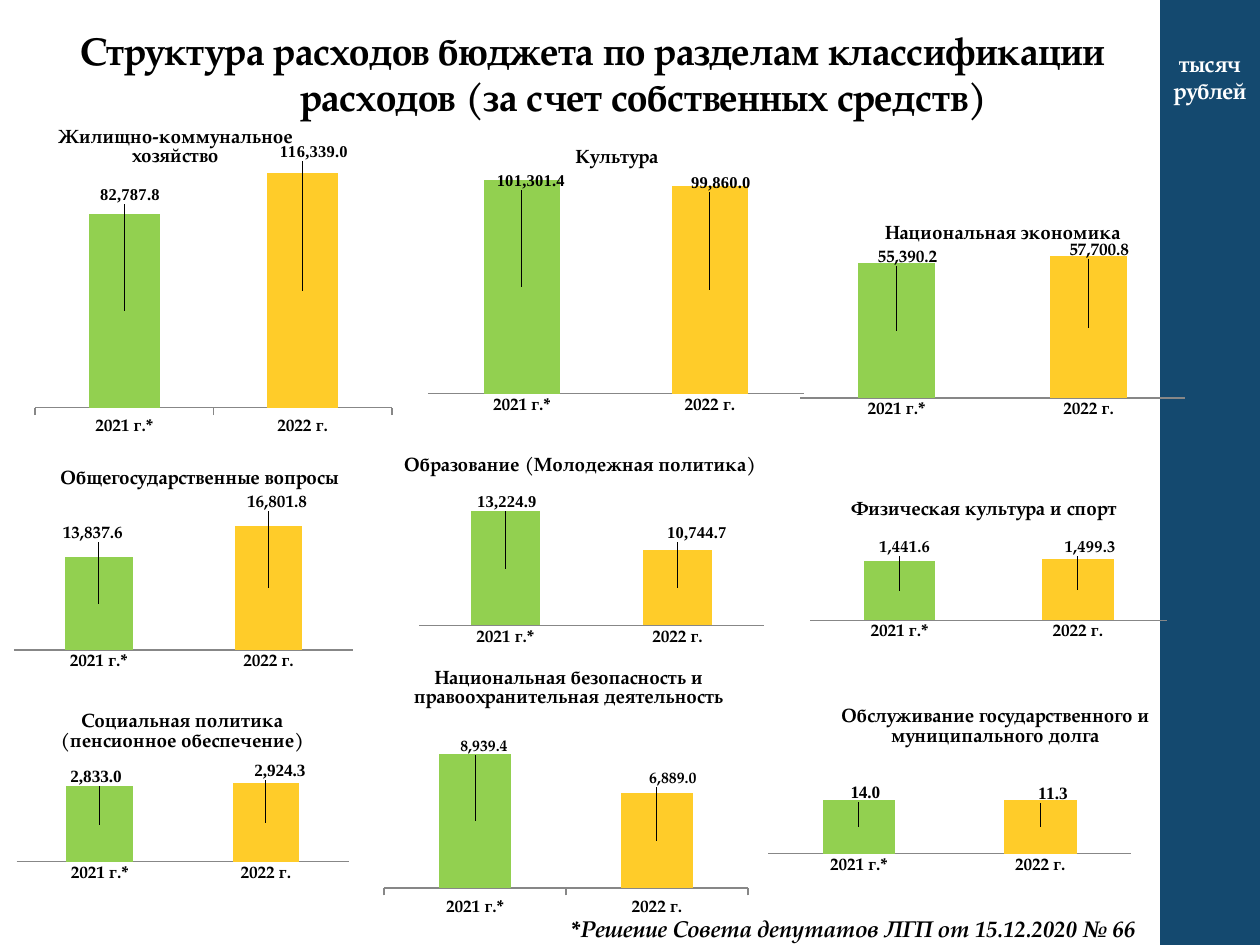
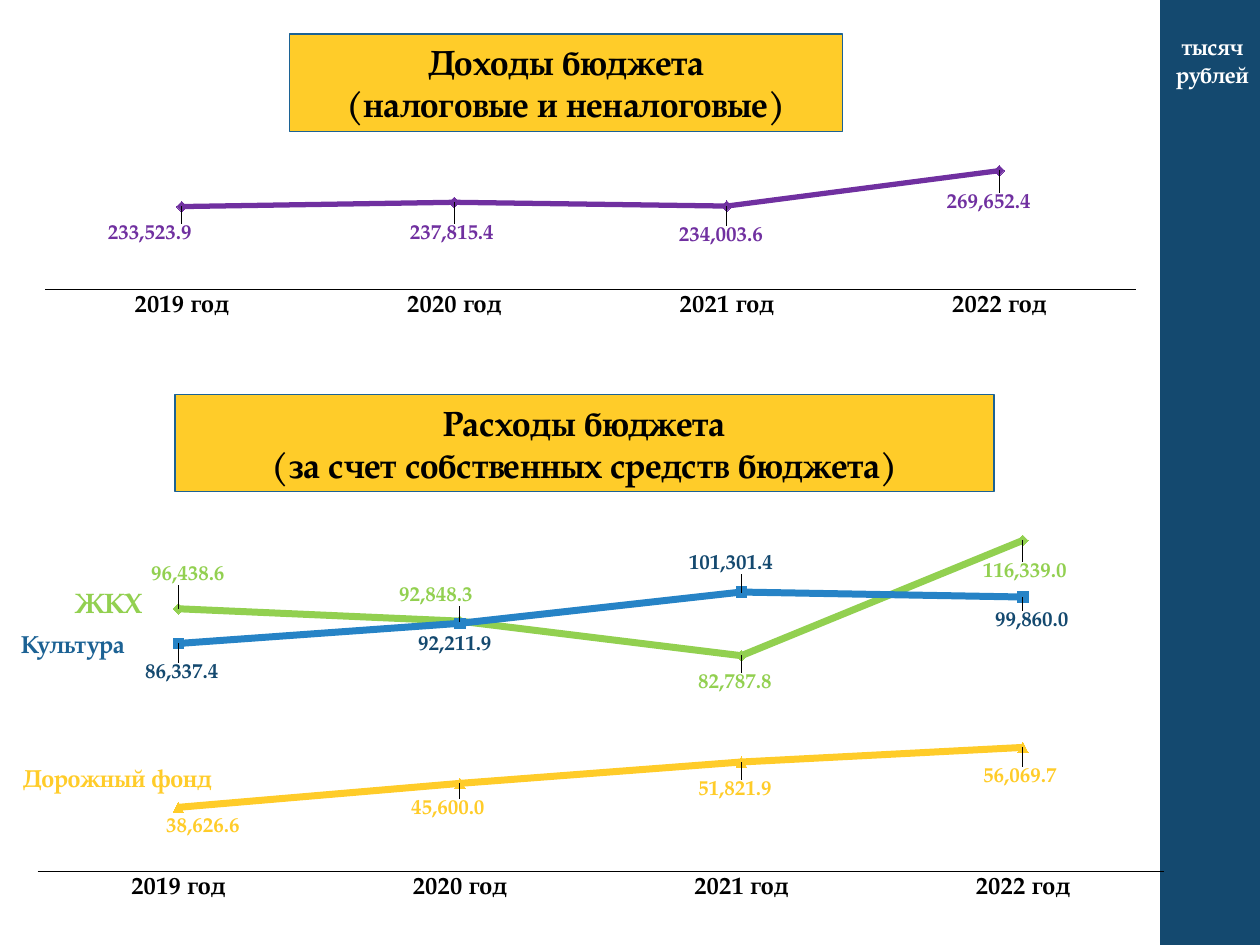
import pptx
import pptx.chart.data
import pptx.dml.color
import pptx.enum.chart
import pptx.enum.shapes
import pptx.enum.text
import pptx.oxml
import pptx.oxml.ns
import pptx.util

Pt = pptx.util.Pt
XL = pptx.enum.chart.XL_CHART_TYPE
MARK = pptx.enum.chart.XL_MARKER_STYLE
TICK = pptx.enum.chart.XL_TICK_MARK
CENTER = pptx.enum.text.PP_ALIGN.CENTER
MIDDLE = pptx.enum.text.MSO_ANCHOR.MIDDLE
RECT = pptx.enum.shapes.MSO_SHAPE.RECTANGLE

FONT, SERIF = "TeX Gyre Pagella", "Times New Roman"
NAVY, BLUE, SKY = "14496F", "1C6294", "2683C6"
GREEN, YELLOW, AMBER, PURPLE = "92D050", "FFCC29", "FFC000", "7030A0"
BLACK, WHITE, GRAY = "000000", "FFFFFF", "878787"
FORMAT = "#,##0.0"

EXPENSES = [
    dict(box=(3, 63, 227, 196), plot=(17, 36, 204, 134), title=["Жилищно-коммунальное", "хозяйство"],
         at=(28, 7), kind=XL.COLUMN_CLUSTERED, values=(82787.8, 116339), limits=(1, 100000),
         labels=[(71.3, 48.4), (176.4, 23.9)], font=SERIF, tick=TICK.OUTSIDE),
    dict(box=(239, 81, 225, 170), plot=(5.5, 20, 215, 124), title=["Культура"],
         at=(88, 1), values=(101301.4, 99860), limits=(50000, 102000),
         labels=[(64.4, 22.4), (173, 23.6)], font=SERIF),
    dict(box=(457, 99, 238, 151), plot=(0, 47.5, 220, 81), title=["Национальная экономика"],
         at=(46.5, 26.5), values=(55390.2, 57700.8), limits=(20000, 57000),
         labels=[(61.3, 49), (171, 45)], size=9.9),
    dict(box=(6, 234, 208, 161), plot=(2, 65.5, 194, 72), title=["Общегосударственные вопросы"],
         at=(26.5, 31.5), kind=XL.COLUMN_CLUSTERED, values=(13837.6, 16801.8), limits=(5000, 17000),
         labels=[(47, 71.7), (152.3, 54)], size=9.8),
    dict(box=(215, 228, 270, 154), plot=(24.5, 57, 197, 72.5), title=["Образование (Молодежная политика)"],
         at=(14, 30), values=(13224.9, 10744.7), limits=(6000, 14000),
         labels=[(74.7, 58.9), (183.3, 76.6)], font=SERIF),
    dict(box=(447, 275, 226, 112), plot=(16, 28, 204, 51.5), title=["Физическая культура и спорт"],
         at=(37.5, 8), values=(1441.6, 1499.3), limits=(1, 2200),
         labels=[(70, 38.7), (176, 38.7)]),
    dict(box=(6.5, 384, 212, 138), plot=(3, 61.5, 190, 47),
         title=["Социальная политика", "(пенсионное обеспечение)"],
         at=(26, 20), values=(2833, 2924.3), limits=(1000, 3000),
         labels=[(48.4, 60), (153.5, 56.6)], font=SERIF, size=9.8),
    dict(box=(203, 363, 242, 174), plot=(16.5, 67, 208, 77.5),
         title=["Национальная безопасность и", "правоохранительная деятельность"],
         at=(31.5, 16), values=(8939.4, 6889), limits=(2000, 9000),
         labels=[(73.6, 64.4), (181.6, 82.7)], size=9, tick=TICK.OUTSIDE),
    dict(box=(428, 372, 231, 151), plot=(11, 85, 209, 31),
         title=["Обслуживание государственного и", "муниципального долга"],
         at=(51, 29), kind=XL.COLUMN_STACKED_100, values=(14, 11.3), limits=(0, 1),
         labels=[(67, 81), (175, 81.7)], font=SERIF, size=9.9),
]

INCOME = [
    dict(values=(233523.9, 237815.4, 234003.6, 269652.4), color=PURPLE, width=3, marker=MARK.DIAMOND,
         labels=[(88.7, 101.7), (261.3, 101.7), (415, 102.9), (568.1, 84)]),
]
SPENDING = [
    dict(values=(96438.6, 92848.3, 82787.8, 116339), color=GREEN, marker=MARK.DIAMOND,
         labels=[(107.4, 52.6), (249.1, 64.6), (420, 114.3), (585.7, 50.9)]),
    dict(values=(86337.4, 92211.9, 101301.4, 99860), color=SKY, marker=MARK.SQUARE, label_color=NAVY,
         labels=[(104, 108.6), (260, 92.6), (417.7, 46.3), (589.7, 78.9)]),
    dict(values=(38626.6, 45600, 51821.9, 56069.7), color=YELLOW, marker=MARK.TRIANGLE, marker_color=AMBER,
         labels=[(116, 196.6), (256, 186.3), (420, 175.4), (582.9, 168)]),
]


def rgb(value):
    return pptx.dml.color.RGBColor.from_string(value)


def style(font, size, color=BLACK, name=FONT, bold=True, italic=False):
    for key, value in dict(size=Pt(size), name=name, bold=bold, italic=italic).items():
        setattr(font, key, value)
    font.color.rgb = rgb(color)


def write(tf, lines, size, color=BLACK, align=None, italic=False):
    for key, value in dict(word_wrap=True, vertical_anchor=MIDDLE).items():
        setattr(tf, key, value)
    for i, line in enumerate(lines):
        p = tf.add_paragraph() if i else tf.paragraphs[0]
        p.alignment = align
        r = p.add_run()
        r.text = line
        style(r.font, size, color, italic=italic)


def add_text(slide, box, text, size, color=BLACK, **fmt):
    sp = slide.shapes.add_textbox(*map(Pt, box))
    write(sp.text_frame, [text], size, color, **fmt)


def add_rect(slide, box, fill, line=None):
    sp = slide.shapes.add_shape(RECT, *map(Pt, box))
    sp.shadow.inherit = False
    sp.fill.solid()
    sp.fill.fore_color.rgb = rgb(fill)
    if line:
        sp.line.color.rgb = rgb(line)
        sp.line.width = Pt(0.75)
    else:
        sp.line.fill.background()
    return sp


def add_banner(slide, box, lines):
    write(add_rect(slide, box, YELLOW, BLUE).text_frame, lines, 20, align=CENTER)


def add_units(slide, left, top):
    add_text(slide, (left, top, 73.5, 39), "тысяч рублей", 13, WHITE, align=CENTER)


def set_layout(parent, index, values, modes=""):
    for old in parent.findall(pptx.oxml.ns.qn("c:layout")):
        parent.remove(old)
    body = "".join(f'<c:{k} val="{v:.4f}"/>' for k, v in zip("xywh", values))
    parent.insert(index, pptx.oxml.parse_xml(
        f'<c:layout {pptx.oxml.ns.nsdecls("c")}><c:manualLayout>{modes}{body}'
        '</c:manualLayout></c:layout>'))


def scale(values, box):
    return [v / box[2 + i % 2] for i, v in enumerate(values)]


def add_chart(slide, kind, box, plot, cats, series, limits, size, tick, line):
    data = pptx.chart.data.CategoryChartData(number_format=FORMAT)
    data.categories = cats
    for name, values in series:
        data.add_series(name, values)
    chart = slide.shapes.add_chart(kind, *map(Pt, box), data).chart
    chart.has_legend = chart.has_title = False
    style(chart.font, 10, name="TeX Gyre Schola", bold=False)
    chart.plots[0].vary_by_categories = False
    axis = chart.value_axis
    for key, value in dict(visible=False, has_major_gridlines=False,
                           minimum_scale=limits[0], maximum_scale=limits[1]).items():
        setattr(axis, key, value)
    axis = chart.category_axis
    axis.major_tick_mark = tick
    style(axis.tick_labels.font, size)
    axis.format.line.color.rgb = rgb(line)
    axis.format.line.width = Pt(0.75)
    modes = '<c:layoutTarget val="inner"/><c:xMode val="edge"/><c:yMode val="edge"/>'
    set_layout(chart._chartSpace.chart.plotArea, 0, scale(plot, box), modes)
    return chart


def add_labels(ser, values, box, plot, limits, spots, depth, **fmt):
    labels = ser.data_labels
    for key, value in dict(show_value=True, number_format=FORMAT, number_format_is_linked=False,
                           position=pptx.enum.chart.XL_LABEL_POSITION.CENTER).items():
        setattr(labels, key, value)
    style(labels.font, **fmt)
    left, top, width, height = plot
    for i, (value, (x, y)) in enumerate(zip(values, spots)):
        share = min(1, (value - limits[0]) / (limits[1] - limits[0]))
        home = left + width * (i + 0.5) / len(values), top + height * (1 - share * depth)
        label = ser.points[i].data_label
        style(label.font, **fmt)
        label.position = pptx.enum.chart.XL_LABEL_POSITION.CENTER
        set_layout(label._dLbl, 1, scale((x - home[0], y - home[1]), box))


def add_bars(slide, box, plot, title, at, values, limits, labels, kind=XL.COLUMN_STACKED,
             font=FONT, size=9.4, tick=TICK.NONE):
    chart = add_chart(slide, kind, box, plot, ["2021 г.*", "2022 г."], [(" ".join(title), values)],
                      limits, 9.9, tick, GRAY)
    bars = chart.plots[0]
    bars.gap_width = 150
    bars.overlap = 0 if kind == XL.COLUMN_CLUSTERED else 100
    ser = bars.series[0]
    for i, color in enumerate((GREEN, YELLOW)):
        fill = ser.points[i].format.fill
        fill.solid()
        fill.fore_color.rgb = rgb(color)
    add_labels(ser, values, box, plot, limits, labels, 0.5, size=size, name=font)
    heading = chart.chart_title
    write(heading.text_frame, title, 10.9, align=CENTER)
    set_layout(heading._element, 1, scale(at, box), '<c:xMode val="edge"/><c:yMode val="edge"/>')


def add_lines(slide, kind, box, plot, limits, rows):
    cats = [f"{year} год" for year in range(2019, 2023)]
    names = [(f"Series {i}", row["values"]) for i, row in enumerate(rows, 1)]
    chart = add_chart(slide, kind, box, plot, cats, names, limits, 14, TICK.NONE, BLACK)
    for ser, row in zip(chart.plots[0].series, rows):
        color = row["color"]
        ser.smooth = False
        ser.format.line.color.rgb = rgb(color)
        ser.format.line.width = Pt(row.get("width", 4))
        ser.marker.style, ser.marker.size = row["marker"], 6
        fmt = ser.marker.format
        fmt.fill.solid()
        fmt.fill.fore_color.rgb = rgb(row.get("marker_color", color))
        fmt.line.color.rgb = rgb(color)
        add_labels(ser, row["values"], box, plot, limits, row["labels"], 1,
                   size=12, color=row.get("label_color", color))


def build_structure(prs):
    slide = prs.slides.add_slide(prs.slide_layouts[5])
    band = add_rect(slide, (663, 0, 57.5, 540), NAVY)
    prs.slide_master.shapes._spTree.insert(2, band._element)
    sp = slide.shapes.title
    for key, value in zip(("left", "top", "width", "height"), (0, 11.5, 677.5, 60.5)):
        setattr(sp, key, Pt(value))
    write(sp.text_frame, ["Структура расходов бюджета по разделам классификации",
                          "расходов (за счет собственных средств)"], 22, align=CENTER)
    sp.text_frame.paragraphs[1]._p.get_or_add_pPr().set("marL", str(Pt(58)))
    for expense in EXPENSES:
        add_bars(slide, **expense)
    add_text(slide, (319.5, 519, 351.5, 23), "*Решение Совета депутатов ЛГП от 15.12.2020 № 66",
             13, italic=True)
    add_units(slide, 654.5, 24.5)


def build_dynamics(prs):
    slide = prs.slides.add_slide(prs.slide_layouts[6])
    add_lines(slide, XL.LINE_MARKERS_STACKED, (-3, 32, 711, 191.5), (29, 54, 623, 79.5),
              (150000, 290000), INCOME)
    add_lines(slide, XL.LINE_MARKERS, (0, 276, 677.5, 272), (21.5, 6, 643.5, 216),
              (20000, 130000), SPENDING)
    add_text(slide, (35.5, 331, 65.5, 26.5), "ЖКХ", 16, GREEN)
    add_text(slide, (5, 355.5, 82, 24.5), "Культура", 14, BLUE)
    add_text(slide, (6, 432, 139, 24.5), "Дорожный фонд", 14, YELLOW)
    add_units(slide, 656, 15)
    add_banner(slide, (165.5, 19.5, 316, 55.5), ["Доходы бюджета", "(налоговые и неналоговые)"])
    add_banner(slide, (100, 225.5, 468, 55.5), ["Расходы бюджета", "(за счет собственных средств бюджета)"])


def main():
    prs = pptx.Presentation()
    prs.slide_width, prs.slide_height = Pt(720), Pt(540)
    build_structure(prs)
    build_dynamics(prs)
    prs.save("out.pptx")


if __name__ == "__main__":
    main()
